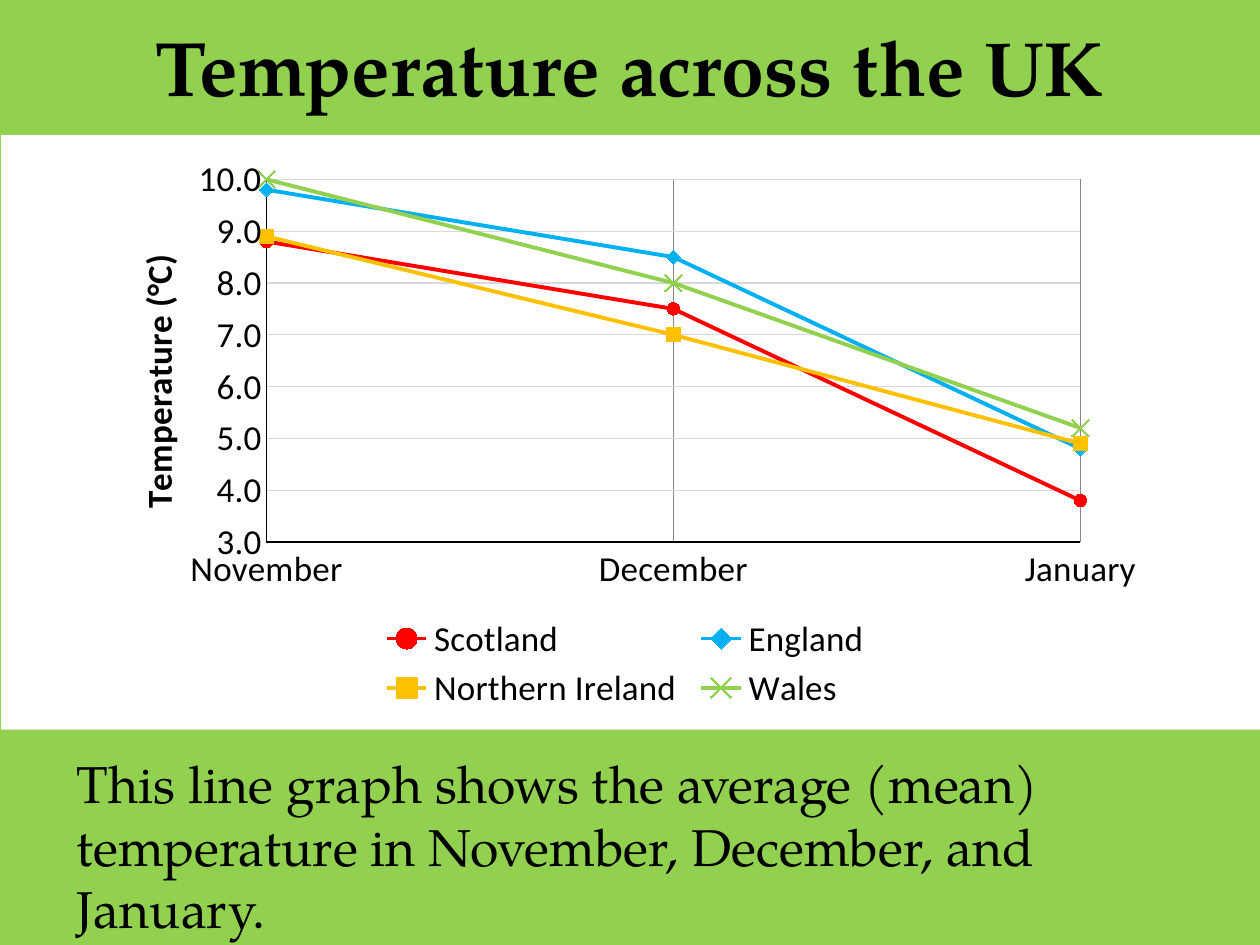
from pptx import Presentation
from pptx.chart.data import CategoryChartData
from pptx.dml.color import RGBColor
from pptx.enum.chart import XL_CHART_TYPE as ChartType
from pptx.enum.chart import XL_LEGEND_POSITION as LegendPosition
from pptx.enum.chart import XL_MARKER_STYLE as Marker
from pptx.enum.chart import XL_TICK_MARK as TickMark
from pptx.enum.shapes import MSO_SHAPE as Shape
from pptx.enum.text import MSO_ANCHOR as Anchor
from pptx.enum.text import PP_ALIGN as Align
from pptx.oxml import parse_xml
from pptx.oxml.ns import nsdecls, qn
from pptx.util import Inches, Pt

WIDTH, HEIGHT = Inches(10), Inches(7.5)
BLACK = RGBColor(0x00, 0x00, 0x00)
WHITE = RGBColor(0xFF, 0xFF, 0xFF)
GREEN = RGBColor(0x92, 0xD0, 0x50)
RED = RGBColor(0xFF, 0x00, 0x00)
BLUE = RGBColor(0x00, 0xB0, 0xF0)
AMBER = RGBColor(0xFF, 0xC0, 0x00)
LIGHT_GREY = RGBColor(0xD9, 0xD9, 0xD9)
MID_GREY = RGBColor(0x87, 0x87, 0x87)

HEADING_FONT = "TeX Gyre Pagella"
CHART_FONT = "Calibri"

MONTHS = ["November", "December", "January"]
NATIONS = [
    ("Scotland", [8.8, 7.5, 3.8], RED, Marker.CIRCLE, 7),
    ("England", [9.8, 8.5, 4.8], BLUE, Marker.DIAMOND, 8),
    ("Northern Ireland", [8.9, 7.0, 4.9], AMBER, Marker.SQUARE, 8),
    ("Wales", [10.0, 8.0, 5.2], GREEN, Marker.X, 10),
]


def style_font(font, name, size, bold=False):
    font.name = name
    font.size = Pt(size)
    font.bold = bold
    font.color.rgb = BLACK


def style_line(line, color, width):
    line.color.rgb = color
    line.width = Pt(width)


def add_text(slide, box, text, size, bold=False, align=Align.LEFT, anchor=Anchor.TOP):
    frame = slide.shapes.add_textbox(*map(Inches, box)).text_frame
    frame.word_wrap = True
    frame.vertical_anchor = anchor
    paragraph = frame.paragraphs[0]
    paragraph.text = text
    paragraph.alignment = align
    style_font(paragraph.font, HEADING_FONT, size, bold)


def add_panel(slide, box):
    panel = slide.shapes.add_shape(Shape.RECTANGLE, *map(Inches, box))
    panel.shadow.inherit = False
    panel.fill.solid()
    panel.fill.fore_color.rgb = WHITE
    panel.line.fill.background()


def place_chart_part(element, index, target="", **shares):
    for layout in element.findall(qn("c:layout")):
        element.remove(layout)
    modes = "".join(f'<c:{axis}Mode val="edge"/>' for axis in "xy")
    sizes = "".join(f'<c:{key} val="{share}"/>' for key, share in shares.items())
    element.insert(index, parse_xml(
        f'<c:layout {nsdecls("c")}><c:manualLayout>{target}{modes}{sizes}'
        "</c:manualLayout></c:layout>"
    ))


def start_lines_on_axis(value_axis):
    element = value_axis._element
    for old in element.findall(qn("c:crossBetween")):
        element.remove(old)
    element.find(qn("c:crosses")).addnext(
        parse_xml(f'<c:crossBetween {nsdecls("c")} val="midCat"/>')
    )


def style_axis(axis, grid_color):
    axis.major_tick_mark = axis.minor_tick_mark = TickMark.NONE
    axis.has_major_gridlines = True
    style_line(axis.major_gridlines.format.line, grid_color, 0.75)
    style_line(axis.format.line, BLACK, 0.75)


def style_value_axis(axis):
    style_axis(axis, LIGHT_GREY)
    axis.minimum_scale, axis.maximum_scale = 3, 10
    start_lines_on_axis(axis)
    axis.major_unit = 1
    axis.tick_labels.number_format = "0.0"
    axis.tick_labels.number_format_is_linked = False
    paragraph = axis.axis_title.text_frame.paragraphs[0]
    paragraph.text = "Temperature (°C)"
    style_font(paragraph.font, CHART_FONT, 20, True)
    place_chart_part(axis.axis_title._element, 1, x=0.04, y=0.18)


def style_series(series, color, marker, size):
    series.smooth = False
    style_line(series.format.line, color, 2.25)
    series.marker.style = marker
    series.marker.size = size
    if marker == Marker.X:
        series.marker.format.fill.background()
    else:
        series.marker.format.fill.solid()
        series.marker.format.fill.fore_color.rgb = color
    series.marker.format.line.color.rgb = color


def add_temperature_chart(slide, box):
    data = CategoryChartData(number_format="0.0")
    data.categories = MONTHS
    for name, values, *_ in NATIONS:
        data.add_series(name, values)
    chart = slide.shapes.add_chart(
        ChartType.LINE_MARKERS, *map(Inches, box), data
    ).chart
    chart.has_title = False
    style_font(chart.font, CHART_FONT, 20)
    plot = chart.plots[0]
    plot.vary_by_categories = False
    for series, (_, _, color, marker, size) in zip(plot.series, NATIONS):
        style_series(series, color, marker, size)
    style_axis(chart.category_axis, MID_GREY)
    style_value_axis(chart.value_axis)
    chart.has_legend = True
    chart.legend.position = LegendPosition.BOTTOM
    chart.legend.include_in_layout = False
    place_chart_part(chart.legend._element, 1, x=0.27, y=0.81, w=0.47, h=0.18)
    place_chart_part(
        chart._chartSpace.chart.plotArea, 0, '<c:layoutTarget val="inner"/>',
        x=0.17, y=0.06, w=0.76, h=0.63,
    )


def main():
    presentation = Presentation()
    presentation.slide_width, presentation.slide_height = WIDTH, HEIGHT
    slide = presentation.slides.add_slide(presentation.slide_layouts[6])
    slide.background.fill.solid()
    slide.background.fill.fore_color.rgb = GREEN

    add_panel(slide, (0.01, 1.07, 10, 4.72))
    add_text(slide, (0.5, -0.1, 9, 1.25), "Temperature across the UK", 44,
             bold=True, align=Align.CENTER, anchor=Anchor.MIDDLE)
    add_text(slide, (0.51, 5.92, 9, 1.53),
             "This line graph shows the average (mean) temperature in "
             "November, December, and January.", 29.6)
    add_temperature_chart(slide, (0.67, 1.15, 8.5, 4.57))
    presentation.save("out.pptx")


if __name__ == "__main__":
    main()
